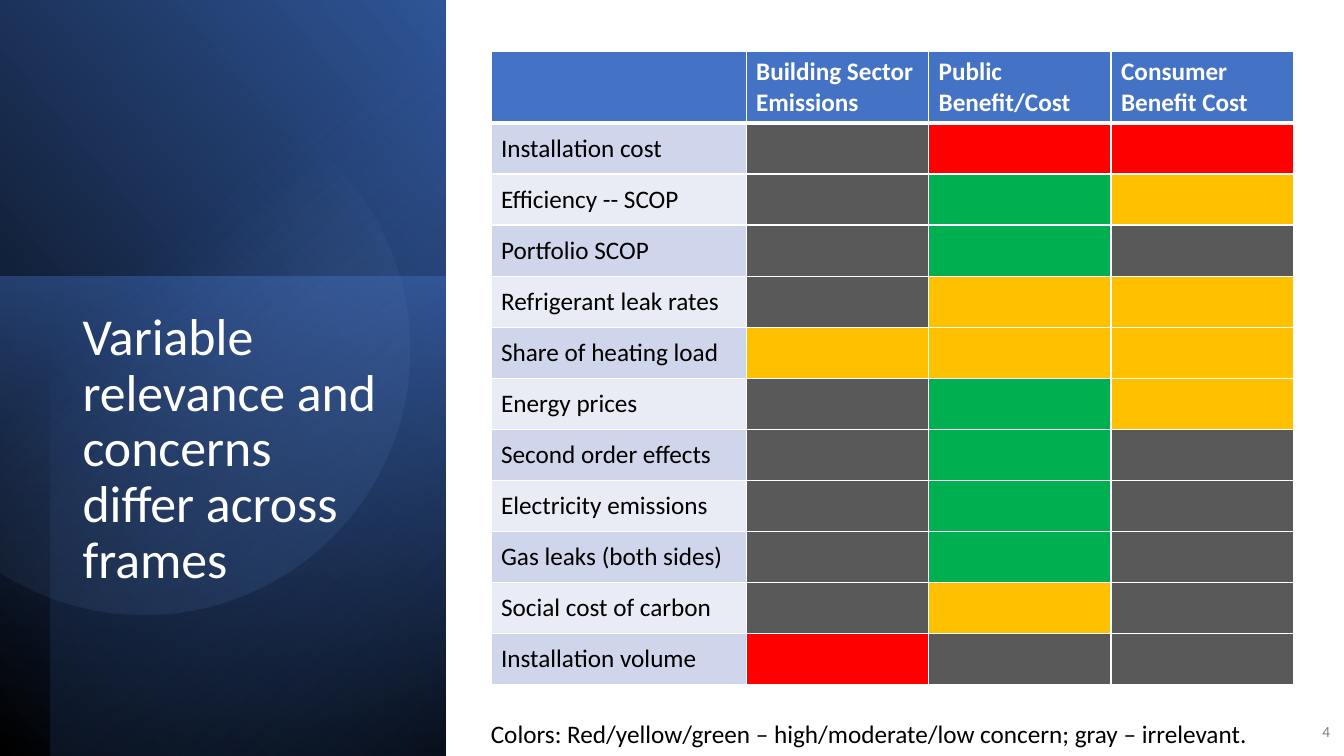
"""Build the slide that compares variable relevance and concern across frames."""
from dataclasses import dataclass
from math import acos, cos, pi, sin

from lxml.etree import SubElement
from pptx import Presentation
from pptx.dml.color import RGBColor as RGB
from pptx.enum.shapes import MSO_SHAPE as SHAPE
from pptx.enum.text import MSO_ANCHOR as ANCHOR, PP_ALIGN as ALIGN
from pptx.oxml import parse_xml
from pptx.oxml.ns import nsdecls, qn
from pptx.util import Inches, Pt


@dataclass(frozen=True)
class Theme:
    font: str = "Calibri"
    white: str = "FFFFFF"
    black: str = "000000"
    page_gray: str = "808080"
    accent: str = "4472C4"
    accent_dark: str = "2F5597"
    accent_deep: str = "203864"
    accent_light: str = "8FAADC"
    bands: tuple[str, str] = ("CFD5EA", "E9EBF5")
    title_size: float = 37
    body_size: float = 18
    page_size: float = 11


@dataclass(frozen=True)
class Stop:
    position: float
    color: str
    alpha: int = 100


@dataclass(frozen=True)
class Panel:
    box: tuple[float, float, float, float]
    rotation: float
    flipped: bool
    angle: float
    stops: tuple[Stop, Stop]


@dataclass(frozen=True)
class Label:
    box: tuple[float, float, float, float]
    text: str
    size: float
    color: str
    align: ALIGN = ALIGN.LEFT
    anchor: ANCHOR = ANCHOR.TOP
    spacing: float = 1.0


@dataclass(frozen=True)
class Variable:
    name: str
    concerns: str


T = Theme()
CONCERN = {"R": "FF0000", "Y": "FFC000", "G": "00B050", "-": "595959"}
PANELS = (
    Panel((-1.55, 1.55, 7.52, 4.42), 90, True, 310,
          (Stop(0, T.black), Stop(1, T.accent_dark))),
    Panel((-0.17, 2.91, 4.76, 4.42), 270, False, 190,
          (Stop(0, T.accent, 50), Stop(1, T.accent_deep, 0))),
    Panel((-1.29, 1.79, 7.5, 3.92), 270, True, 220,
          (Stop(0, T.black, 59), Stop(0.69, T.accent, 0))),
)
DISC_STOPS = (Stop(0.39, T.accent_light, 0), Stop(1, T.accent_dark, 26))
LABELS = (
    Label((0.72, 3.03, 3.15, 3.36), "Variable relevance and concerns differ across frames",
          T.title_size, T.white, spacing=0.9),
    Label((12.8, 7.06, 0.49, 0.4), "4", T.page_size, T.page_gray,
          ALIGN.RIGHT, ANCHOR.MIDDLE),
    Label((4.77, 7.08, 8.06, 0.4),
          "Colors: Red/yellow/green – high/moderate/low concern; gray – irrelevant.",
          T.body_size, T.black),
)
HEADERS = ("", "Building Sector Emissions", "Public Benefit/Cost", "Consumer\nBenefit Cost")
VARIABLES = (
    Variable("Installation cost", "-RR"),
    Variable("Efficiency -- SCOP", "-GY"),
    Variable("Portfolio SCOP", "-G-"),
    Variable("Refrigerant leak rates", "-YY"),
    Variable("Share of heating load", "YYY"),
    Variable("Energy prices", "-GY"),
    Variable("Second order effects", "-G-"),
    Variable("Electricity emissions", "-G-"),
    Variable("Gas leaks (both sides)", "-G-"),
    Variable("Social cost of carbon", "-Y-"),
    Variable("Installation volume", "R--"),
)


def paint_gradient(s, stops: tuple[Stop, Stop], angle: float) -> None:
    """Fill a shape with a linear gradient at a clockwise angle."""
    s.shadow.inherit = False
    s.line.fill.background()
    s.fill.gradient()
    s.fill.gradient_angle = 360 - angle
    for gs, stop in zip(s.fill.gradient_stops, stops):
        gs.color.rgb = RGB.from_string(stop.color)
        gs.position = stop.position
    for clr, stop in zip(s._element.spPr.iter(qn("a:srgbClr")), stops):
        SubElement(clr, qn("a:alpha")).set("val", str(stop.alpha * 1000))


def add_panel(slide, panel: Panel) -> None:
    """Draw one rotated gradient panel."""
    s = slide.shapes.add_shape(SHAPE.RECTANGLE, *map(Inches, panel.box))
    s.rotation = panel.rotation
    if panel.flipped:
        s._element.spPr.xfrm.set("flipH", "1")
    paint_gradient(s, panel.stops, panel.angle)


def add_disc(slide, cx: float, cy: float, radius: float, steps: int = 120) -> None:
    """Draw a disc cut off by the left slide edge."""
    reach = acos(-cx / radius)
    angles = [reach * (2 * i / steps - 1) for i in range(steps + 1)]
    points = [(Inches(cx + radius * cos(a)), Inches(cy + radius * sin(a))) for a in angles]
    builder = slide.shapes.build_freeform(*points[0])
    builder.add_line_segments(points[1:], close=True)
    paint_gradient(builder.convert_to_shape(), DISC_STOPS, 50)


def format_text(tf, size: float, color: str, bold: bool = False) -> None:
    """Apply font, size and colour to every run of a text frame."""
    for p in tf.paragraphs:
        for r in p.runs:
            r.font.name = T.font
            r.font.size = Pt(size)
            r.font.bold = bold
            r.font.color.rgb = RGB.from_string(color)


def add_label(slide, label: Label) -> None:
    """Place one text box."""
    tf = slide.shapes.add_textbox(*map(Inches, label.box)).text_frame
    tf.word_wrap = True
    tf.vertical_anchor = label.anchor
    tf.text = label.text
    tf.paragraphs[0].alignment = label.align
    tf.paragraphs[0].line_spacing = label.spacing
    format_text(tf, label.size, label.color)


def style_cell(cell, fill: str, top: float = 1, bottom: float = 1) -> None:
    """Fill a cell and give it white borders."""
    cell.fill.solid()
    cell.fill.fore_color.rgb = RGB.from_string(fill)
    tc_pr = cell._tc.get_or_add_tcPr()
    for i, (side, width) in enumerate(zip("LRTB", (1, 1, top, bottom))):
        tc_pr.insert(i, parse_xml(
            f'<a:ln{side} {nsdecls("a")} w="{Pt(width)}"><a:solidFill>'
            f'<a:srgbClr val="{T.white}"/></a:solidFill></a:ln{side}>'))


def add_concern_table(slide) -> None:
    """Draw the table of concern by variable and frame."""
    shape = slide.shapes.add_table(len(VARIABLES) + 1, len(HEADERS), Inches(4.87),
                                   Inches(0.51), Inches(7.96), Inches(6.27))
    table = shape.table
    for column, width in zip(table.columns, (2.53, 1.81, 1.81, 1.81)):
        column.width = Inches(width)
    for row in table.rows:
        row.height = Inches(5.57 / len(VARIABLES))
    table.rows[0].height = Inches(0.7)
    for col, header in enumerate(HEADERS):
        cell = table.cell(0, col)
        cell.text_frame.text = header
        format_text(cell.text_frame, T.body_size, T.white, bold=True)
        style_cell(cell, T.accent, bottom=3)
    for row, variable in enumerate(VARIABLES, 1):
        top = 3 if row == 1 else 1
        cell = table.cell(row, 0)
        cell.text_frame.text = variable.name
        cell.vertical_anchor = ANCHOR.MIDDLE
        format_text(cell.text_frame, T.body_size, T.black)
        style_cell(cell, T.bands[(row - 1) % 2], top)
        for col, concern in enumerate(variable.concerns, 1):
            style_cell(table.cell(row, col), CONCERN[concern], top)


def main() -> None:
    """Build and save the slide."""
    prs = Presentation()
    prs.slide_width, prs.slide_height = Inches(13.33), Inches(7.5)
    slide = prs.slides.add_slide(prs.slide_layouts[6])
    for panel in PANELS:
        add_panel(slide, panel)
    add_disc(slide, 1.43, 3.47, 2.63)
    add_concern_table(slide)
    for label in LABELS:
        add_label(slide, label)
    prs.save("out.pptx")


if __name__ == "__main__":
    main()
